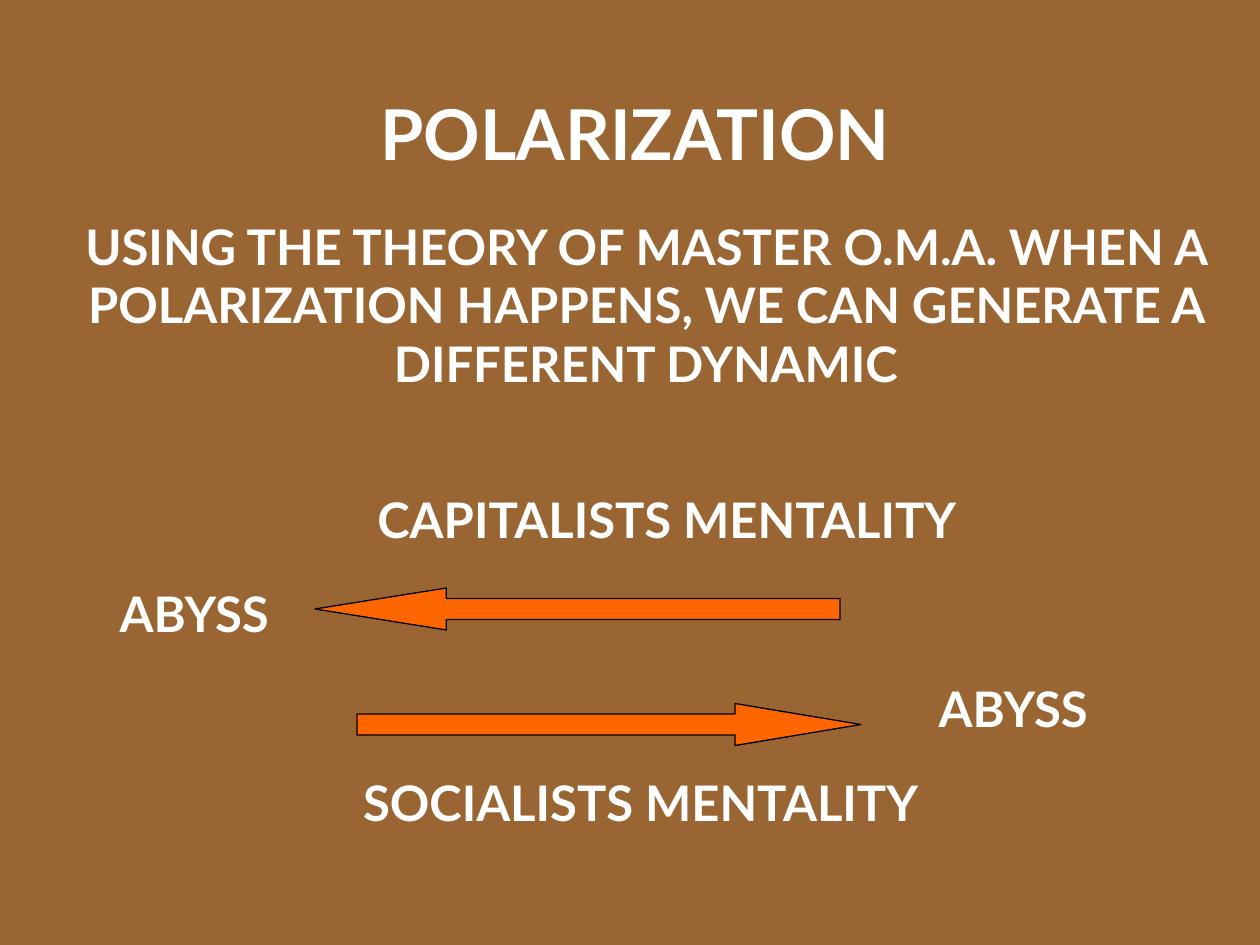
import pptx
import pptx.dml.color
import pptx.enum.shapes
import pptx.enum.text
import pptx.util

COLUMNS, ROWS = 120, 90
COLORS = {"background": "996633", "text": "FFFFFF", "arrow": "FF6600", "outline": "000000"}
FONT = {"name": "Lato", "bold": True}
FRAME = {"word_wrap": True, "auto_size": pptx.enum.text.MSO_AUTO_SIZE.SHAPE_TO_FIT_TEXT}
LEFT_ARROW = pptx.enum.shapes.MSO_SHAPE.LEFT_ARROW
RIGHT_ARROW = pptx.enum.shapes.MSO_SHAPE.RIGHT_ARROW

TITLE_SIZE, BODY_SIZE = 40, 28
LABEL_HEIGHT, ARROW_HEIGHT = 6.8, 4
LABELS = [
    ("CAPITALISTS MENTALITY", 24, 46, 79),
    ("ABYSS", 8, 55, 21),
    ("ABYSS", 86, 64, 21),
    ("SOCIALISTS MENTALITY", 28, 73, 66),
]
ARROWS = [(LEFT_ARROW, 30, 56, 50), (RIGHT_ARROW, 34, 67, 48)]


def color(name):
    return pptx.dml.color.RGBColor.from_string(COLORS[name])


def apply_format(target, values):
    for name, value in values.items():
        setattr(target, name, value)


def place(column, row, width, height):
    cell = pptx.util.Inches(10) / COLUMNS
    return [round(cell * length) for length in (column, row, width, height)]


def add_text(slide, text, column, row, width, height=LABEL_HEIGHT, size=BODY_SIZE):
    shape = slide.shapes.add_textbox(*place(column, row, width, height))
    apply_format(shape.text_frame, FRAME)
    paragraph = shape.text_frame.paragraphs[0]
    paragraph.alignment = pptx.enum.text.PP_ALIGN.CENTER
    run = paragraph.add_run()
    run.text = text
    apply_format(run.font, {**FONT, "size": pptx.util.Pt(size)})
    run.font.color.rgb = color("text")


def add_arrow(slide, kind, column, row, width):
    shape = slide.shapes.add_shape(kind, *place(column, row, width, ARROW_HEIGHT))
    shape.adjustments[0] = 0.5
    shape.adjustments[1] = width / ARROW_HEIGHT / 4
    shape.shadow.inherit = False
    shape.fill.solid()
    shape.fill.fore_color.rgb = color("arrow")
    shape.line.color.rgb = color("outline")
    shape.line.width = pptx.util.Pt(0.75)


def main():
    presentation = pptx.Presentation()
    presentation.slide_width = pptx.util.Inches(10)
    presentation.slide_height = pptx.util.Inches(10 * ROWS / COLUMNS)
    slide = presentation.slides.add_slide(presentation.slide_layouts[6])
    slide.background.fill.solid()
    slide.background.fill.fore_color.rgb = color("background")

    add_text(slide, "POLARIZATION", 30, 8, 61, 9.2, TITLE_SIZE)
    for label in LABELS:
        add_text(slide, *label)
    for arrow in ARROWS:
        add_arrow(slide, *arrow)
    add_text(
        slide,
        "USING THE THEORY OF MASTER O.M.A. WHEN A POLARIZATION HAPPENS, "
        "WE CAN GENERATE A DIFFERENT DYNAMIC",
        3, 20, 117, 18,
    )
    presentation.save("out.pptx")


if __name__ == "__main__":
    main()
